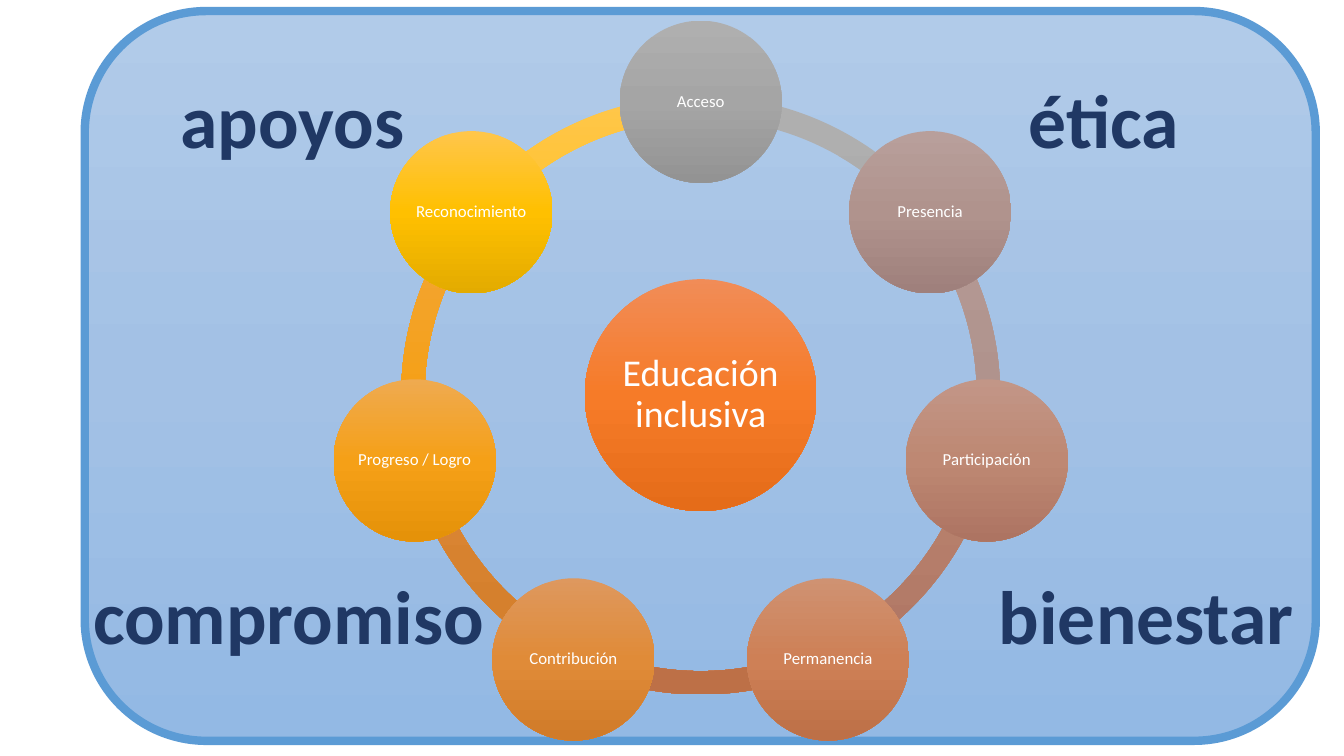
from dataclasses import dataclass
from math import cos, radians, sin

from lxml.etree import SubElement
from pptx import Presentation
from pptx.dml.color import RGBColor as RGB
from pptx.enum.shapes import MSO_SHAPE as Preset
from pptx.enum.text import MSO_ANCHOR as Anchor, PP_ALIGN as Align
from pptx.oxml.ns import qn
from pptx.shapes.autoshape import Shape
from pptx.slide import Slide
from pptx.text.text import TextFrame
from pptx.util import Inches, Pt

Gradient = tuple[str, str, str]  # top, middle, bottom


@dataclass(frozen=True)
class Theme:
    font: str = "Calibri"
    panel: Gradient = ("B1CBE9", "A3C1E5", "93B9E4")
    panel_line: str = "5B9BD5"
    hub: Gradient = ("F18C57", "F67B28", "E56C19")
    on_circle: str = "FFFFFF"
    value: str = "203864"
    hub_size: int = 27
    stage_size: int = 12
    value_size: int = 54


@dataclass(frozen=True)
class Stage:
    label: str
    gradient: Gradient


@dataclass(frozen=True)
class Value:
    word: str
    left: float
    top: float
    width: float


THEME = Theme()

# Ring geometry, in inches
CENTER_X, CENTER_Y = 6.95, 3.92
ORBIT = 2.91
RING_SIZE, HUB_SIZE, STAGE_SIZE = 5.94, 2.3, 1.61
RING_THICKNESS = 0.039
ANGLE_UNIT = 0.6  # adjustment units per degree

# Clockwise from the top
STAGES = [
    Stage("Acceso", ("AFAFAF", "A5A5A5", "939393")),
    Stage("Presencia", ("B89F9B", "B0938D", "9F807C")),
    Stage("Participación", ("C29687", "BE8873", "AD7462")),
    Stage("Permanencia", ("CF9272", "CE8056", "BD7047")),
    Stage("Contribución", ("DE985E", "E08B38", "D07B29")),
    Stage("Progreso / Logro", ("EFAA50", "F5A017", "E59209")),
    Stage("Reconocimiento", ("FFC64B", "FFC000", "E3AB00")),
]

VALUES = [
    Value("apoyos", 1.56, 0.67, 2.68),
    Value("ética", 9.61, 0.67, 2.68),
    Value("compromiso", 0.16, 5.59, 5.41),
    Value("bienestar", 9.42, 5.59, 3.9),
]


def add_filled(slide: Slide, preset: Preset, left: float, top: float,
               width: float, height: float, gradient: Gradient) -> Shape:
    """Add a borderless shape with a vertical three-stop gradient."""
    shape = slide.shapes.add_shape(
        preset, Inches(left), Inches(top), Inches(width), Inches(height))
    shape.shadow.inherit = False
    shape.line.fill.background()
    shape.fill.gradient()
    shape.fill.gradient_angle = 270
    stops = shape._element.spPr.find(qn("a:gradFill")).find(qn("a:gsLst"))
    for stop in list(stops):
        stops.remove(stop)
    for position, color in zip((0, 50000, 100000), gradient):
        stop = SubElement(stops, qn("a:gs"), pos=str(position))
        SubElement(stop, qn("a:srgbClr"), val=color)
    return shape


def write(frame: TextFrame, text: str, size: int, color: str,
          bold: bool = False) -> None:
    """Set one centred paragraph and format its runs."""
    frame.word_wrap = True
    frame.text = text
    paragraph = frame.paragraphs[0]
    paragraph.alignment = Align.CENTER
    for run in paragraph.runs:
        run.font.name = THEME.font
        run.font.size = Pt(size)
        run.font.bold = bold
        run.font.color.rgb = RGB.from_string(color)


def add_centered(slide: Slide, preset: Preset, x: float, y: float,
                 size: float, gradient: Gradient) -> Shape:
    return add_filled(slide, preset, x - size / 2, y - size / 2,
                      size, size, gradient)


def add_circle(slide: Slide, x: float, y: float, size: float,
               gradient: Gradient, label: str, type_size: int) -> None:
    circle = add_centered(slide, Preset.OVAL, x, y, size, gradient)
    frame = circle.text_frame
    frame.margin_left = frame.margin_right = Inches(0.01)
    frame.margin_top = frame.margin_bottom = Inches(0.01)
    frame.vertical_anchor = Anchor.MIDDLE
    write(frame, label, type_size, THEME.on_circle)
    frame.paragraphs[0].line_spacing = 0.9


def add_arc(slide: Slide, start: float, end: float,
            gradient: Gradient) -> None:
    arc = add_centered(slide, Preset.BLOCK_ARC, CENTER_X, CENTER_Y,
                       RING_SIZE, gradient)
    arc.adjustments[0] = start % 360 * ANGLE_UNIT
    arc.adjustments[1] = end % 360 * ANGLE_UNIT
    arc.adjustments[2] = RING_THICKNESS


def add_value(slide: Slide, value: Value) -> None:
    box = slide.shapes.add_textbox(Inches(value.left), Inches(value.top),
                                   Inches(value.width), Inches(1.01))
    write(box.text_frame, value.word, THEME.value_size, THEME.value, True)


def main() -> None:
    deck = Presentation()
    deck.slide_width, deck.slide_height = Inches(13.33), Inches(7.5)
    slide = deck.slides.add_slide(deck.slide_layouts[6])

    # Background panel
    panel = add_filled(slide, Preset.ROUNDED_RECTANGLE,
                       0.84, 0.11, 12.21, 7.24, THEME.panel)
    panel.line.color.rgb = RGB.from_string(THEME.panel_line)
    panel.line.width = Pt(6)

    # Ring of arcs, each running from its stage to the next
    step = 360 / len(STAGES)
    angles = [-90 + step * i for i in range(len(STAGES))]
    for stage, angle in reversed(list(zip(STAGES, angles))):
        add_arc(slide, angle, angle + step, stage.gradient)

    # Hub and stages
    add_circle(slide, CENTER_X, CENTER_Y, HUB_SIZE, THEME.hub,
               "Educación inclusiva", THEME.hub_size)
    for stage, angle in zip(STAGES, angles):
        add_circle(slide, CENTER_X + ORBIT * cos(radians(angle)),
                   CENTER_Y + ORBIT * sin(radians(angle)), STAGE_SIZE,
                   stage.gradient, stage.label, THEME.stage_size)

    # Values in the corners
    for value in VALUES:
        add_value(slide, value)

    deck.save("out.pptx")


if __name__ == "__main__":
    main()
